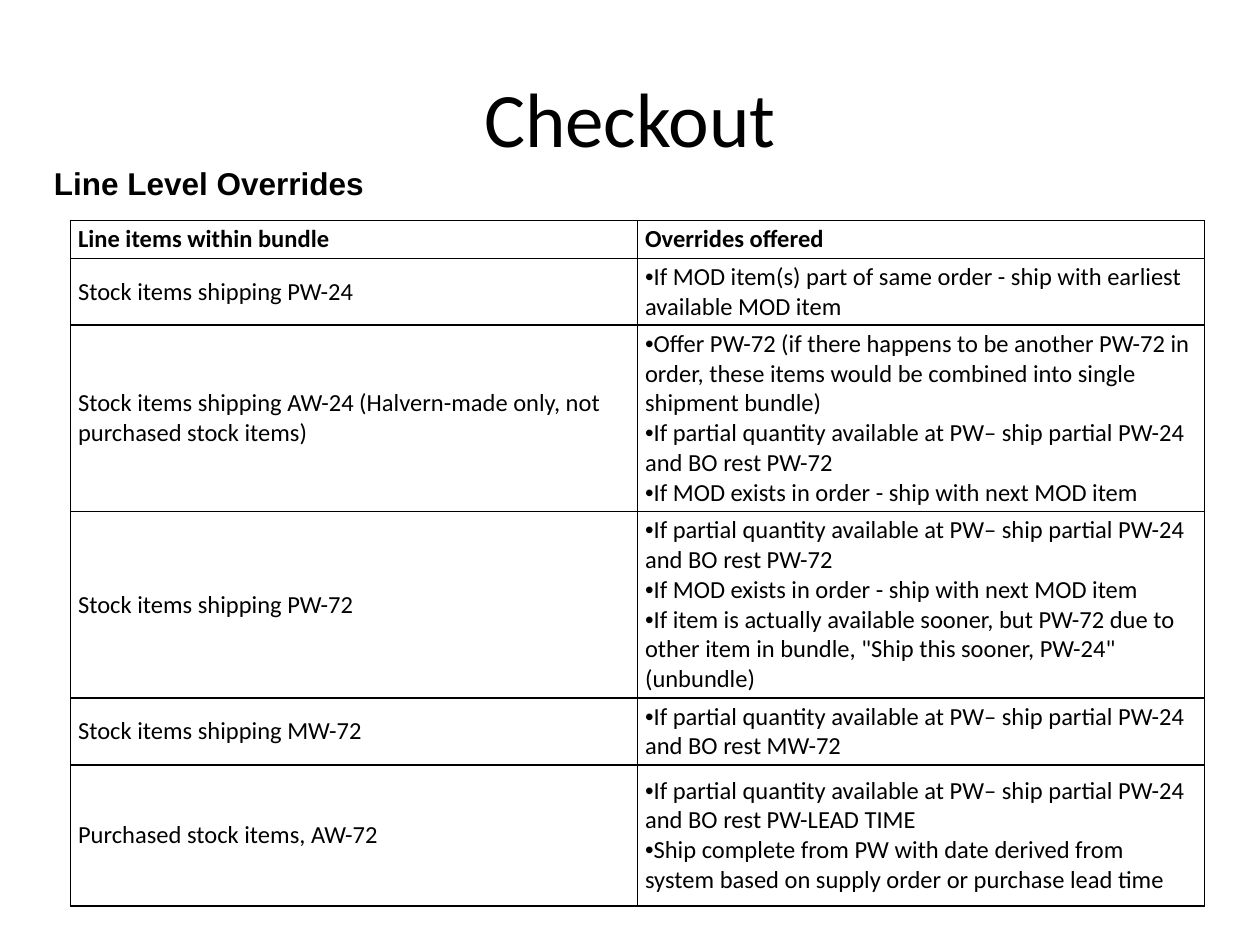
from dataclasses import dataclass

from lxml.etree import SubElement as Sub
from pptx import Presentation
from pptx.dml.color import RGBColor as Rgb
from pptx.enum.text import MSO_ANCHOR as Anchor, PP_ALIGN as Align
from pptx.oxml.ns import qn
from pptx.util import Inches, Pt

COLORS = {"ink": "000000"}
PARTIAL = "If partial quantity available at PW– ship partial PW-24 and BO rest "
NEXT_MOD = "If MOD exists in order - ship with next MOD item"


@dataclass
class Row:
    item: str
    offers: list[str]
    height: float
    head: bool = False


ROWS = [
    Row("Line items within bundle", ["Overrides offered"], 0.3, head=True),
    Row("Stock items shipping PW-24",
        ["If MOD item(s) part of same order - ship with earliest available MOD item"], 0.53),
    Row("Stock items shipping AW-24 (Halvern-made only, not purchased stock items)",
        ["Offer PW-72 (if there happens to be another PW-72 in order, "
         "these items would be combined into single shipment bundle)",
         PARTIAL + "PW-72", NEXT_MOD], 1.48),
    Row("Stock items shipping PW-72",
        [PARTIAL + "PW-72", NEXT_MOD,
         "If item is actually available sooner, but PW-72 due to other item in bundle, "
         '"Ship this sooner, PW-24" (unbundle)'], 1.48),
    Row("Stock items shipping MW-72", [PARTIAL + "MW-72"], 0.53),
    Row("Purchased stock items, AW-72",
        [PARTIAL + "PW-LEAD TIME",
         "Ship complete from PW with date derived from system "
         "based on supply order or purchase lead time"], 1.12),
]


def write(frame, lines: list[str], *, size: float, face: str = "Calibri",
          bold: bool = False, align=Align.LEFT, bullet: bool = False) -> None:
    frame.word_wrap = True
    for i, line in enumerate(lines):
        para = frame.add_paragraph() if i else frame.paragraphs[0]
        para.alignment = align
        if bullet:
            props = para._p.get_or_add_pPr()
            props.set("marL", "0")
            props.set("indent", "0")
            Sub(props, qn("a:buFont"), typeface="Arial")
            Sub(props, qn("a:buChar"), char="•")
        run = para.add_run()
        run.text = line
        font = run.font
        font.size, font.name, font.bold = Pt(size), face, bold
        font.color.rgb = Rgb.from_string(COLORS["ink"])


def add_text(slide, text: str, left: float, top: float, width: float,
             height: float, **style) -> None:
    box = slide.shapes.add_textbox(Inches(left), Inches(top), Inches(width), Inches(height))
    box.text_frame.vertical_anchor = Anchor.MIDDLE
    write(box.text_frame, [text], **style)


def draw_cell(cell, lines: list[str], **style) -> None:
    cell.margin_left = cell.margin_right = Inches(0.06)
    cell.margin_top = cell.margin_bottom = Inches(0.03)
    cell.vertical_anchor = Anchor.MIDDLE
    props = cell._tc.get_or_add_tcPr()
    for side in ("lnL", "lnR", "lnT", "lnB"):
        line = Sub(props, qn(f"a:{side}"), w=str(Pt(1)))
        Sub(Sub(line, qn("a:solidFill")), qn("a:srgbClr"), val=COLORS["ink"])
    cell.fill.background()
    write(cell.text_frame, lines, size=14, **style)


def add_grid(slide, rows: list[Row]) -> None:
    total = sum(row.height for row in rows)
    table = slide.shapes.add_table(len(rows), 2, Inches(0.56), Inches(1.75),
                                   Inches(9), Inches(total)).table
    table.horz_banding = False
    for i, row in enumerate(rows):
        table.rows[i].height = Inches(row.height)
        draw_cell(table.cell(i, 0), [row.item], bold=row.head)
        draw_cell(table.cell(i, 1), row.offers, bold=row.head, bullet=not row.head)


def main() -> None:
    deck = Presentation()
    deck.slide_width, deck.slide_height = Inches(10), Inches(7.5)
    slide = deck.slides.add_slide(deck.slide_layouts[6])
    add_text(slide, "Checkout", 0.5, 0.3, 9, 1.25, size=44, align=Align.CENTER)
    add_grid(slide, ROWS)
    add_text(slide, "Line Level Overrides", 0.33, 1.25, 9.21, 0.4,
             size=18, face="Arial", bold=True)
    deck.save("out.pptx")


if __name__ == "__main__":
    main()
